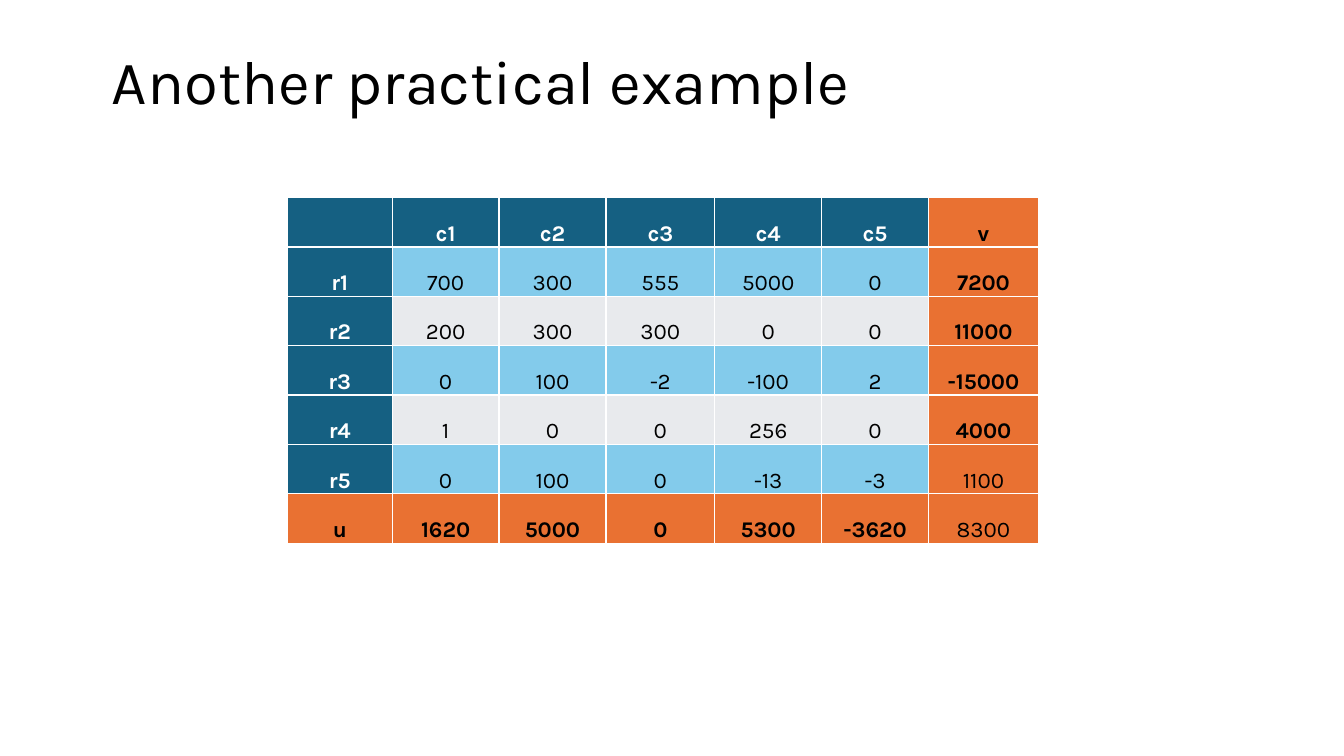
from dataclasses import dataclass

from lxml.etree import SubElement as Sub
from pptx import Presentation
from pptx.dml.color import RGBColor as Rgb
from pptx.enum.text import MSO_ANCHOR as Anchor, MSO_AUTO_SIZE as Fit, PP_ALIGN as Align
from pptx.oxml.ns import qn
from pptx.util import Inches, Pt

WIDE, HIGH = 13.33, 7.5
FONT = "Karla"
BLACK, WHITE = "000000", "FFFFFF"
NAVY, SKY, GREY, RUST = "156082", "83CBEB", "E8EAED", "E97132"

COLS = [1.04, 1.06, 1.06, 1.08, 1.06, 1.06, 1.09]
ROW = 0.49
GRID = [
    ["", "c1", "c2", "c3", "c4", "c5", "v"],
    ["r1", "700", "300", "555", "5000", "0", "7200"],
    ["r2", "200", "300", "300", "0", "0", "11000"],
    ["r3", "0", "100", "-2", "-100", "2", "-15000"],
    ["r4", "1", "0", "0", "256", "0", "4000"],
    ["r5", "0", "100", "0", "-13", "-3", "1100"],
    ["u", "1620", "5000", "0", "5300", "-3620", "8300"],
]
END_ROW, END_COL = len(GRID) - 1, len(COLS) - 1


@dataclass(frozen=True)
class Look:
    fill: str
    ink: str = BLACK
    bold: bool = False
    side: float = 0.01
    top: float = 0.01
    lead: float = 1.0
    after: float = 0


HEAD = Look(NAVY, WHITE, True, side=0.05, top=0, lead=1.07, after=8)
SUM, PLAIN = Look(RUST, bold=True), Look(RUST)
BANDS = [Look(GREY), Look(SKY)]


def color(code: str) -> Rgb:
    return Rgb.from_string(code)


def across(share: float) -> int:
    return Inches(WIDE * share)


def down(share: float) -> int:
    return Inches(HIGH * share)


def write(frame, text: str, *, size: float, ink: str = BLACK, bold: bool = False,
          align=Align.LEFT, lead: float = 1.0, after: float = 0) -> None:
    para = frame.paragraphs[0]
    para.alignment, para.line_spacing, para.space_after = align, lead, Pt(after)
    run = para.add_run()
    run.text = text
    font = run.font
    font.name, font.size, font.bold = FONT, Pt(size), bold
    font.color.rgb = color(ink)


def choose(row: int, col: int) -> Look:
    """Pick the look of a cell from its place in the grid."""
    if row == END_ROW or col == END_COL:
        return PLAIN if col == END_COL and row >= END_ROW - 1 else SUM
    return HEAD if row == 0 or col == 0 else BANDS[row % 2]


def border(cell, code: str, width: float) -> None:
    props = cell._tc.get_or_add_tcPr()
    for edge in ("lnL", "lnR", "lnT", "lnB"):
        line = Sub(props, qn(f"a:{edge}"), w=str(Pt(width)))
        Sub(Sub(line, qn("a:solidFill")), qn("a:srgbClr"), val=code)


def paint(cell, text: str, look: Look) -> None:
    border(cell, WHITE, 1)
    cell.fill.solid()
    cell.fill.fore_color.rgb = color(look.fill)
    cell.vertical_anchor = Anchor.BOTTOM
    cell.margin_left = cell.margin_right = Inches(look.side)
    cell.margin_top, cell.margin_bottom = Inches(look.top), 0
    if text:
        write(cell.text_frame, text, size=16, ink=look.ink, bold=look.bold,
              align=Align.CENTER, lead=look.lead, after=look.after)


def add_grid(slide) -> None:
    table = slide.shapes.add_table(
        len(GRID), len(COLS), across(0.2138), down(0.2613),
        Inches(sum(COLS)), Inches(ROW * len(GRID))).table
    for col, width in zip(table.columns, COLS):
        col.width = Inches(width)
    for r, line in enumerate(GRID):
        table.rows[r].height = Inches(ROW)
        for c, text in enumerate(line):
            paint(table.cell(r, c), text, choose(r, c))


def add_title(slide, text: str) -> None:
    title = slide.shapes.title
    title.left, title.top = across(0.0758), down(0.02)
    title.width, title.height = across(0.8492), down(0.184)
    frame = title.text_frame
    frame.word_wrap, frame.auto_size = True, Fit.NONE
    frame.vertical_anchor = Anchor.MIDDLE
    write(frame, text, size=44, lead=0.9)


def main() -> None:
    deck = Presentation()
    deck.slide_width, deck.slide_height = Inches(WIDE), Inches(HIGH)
    slide = deck.slides.add_slide(deck.slide_layouts[5])
    # Title
    add_title(slide, "Another practical example")
    # Table of values with its sums
    add_grid(slide)
    deck.save("out.pptx")


if __name__ == "__main__":
    main()
